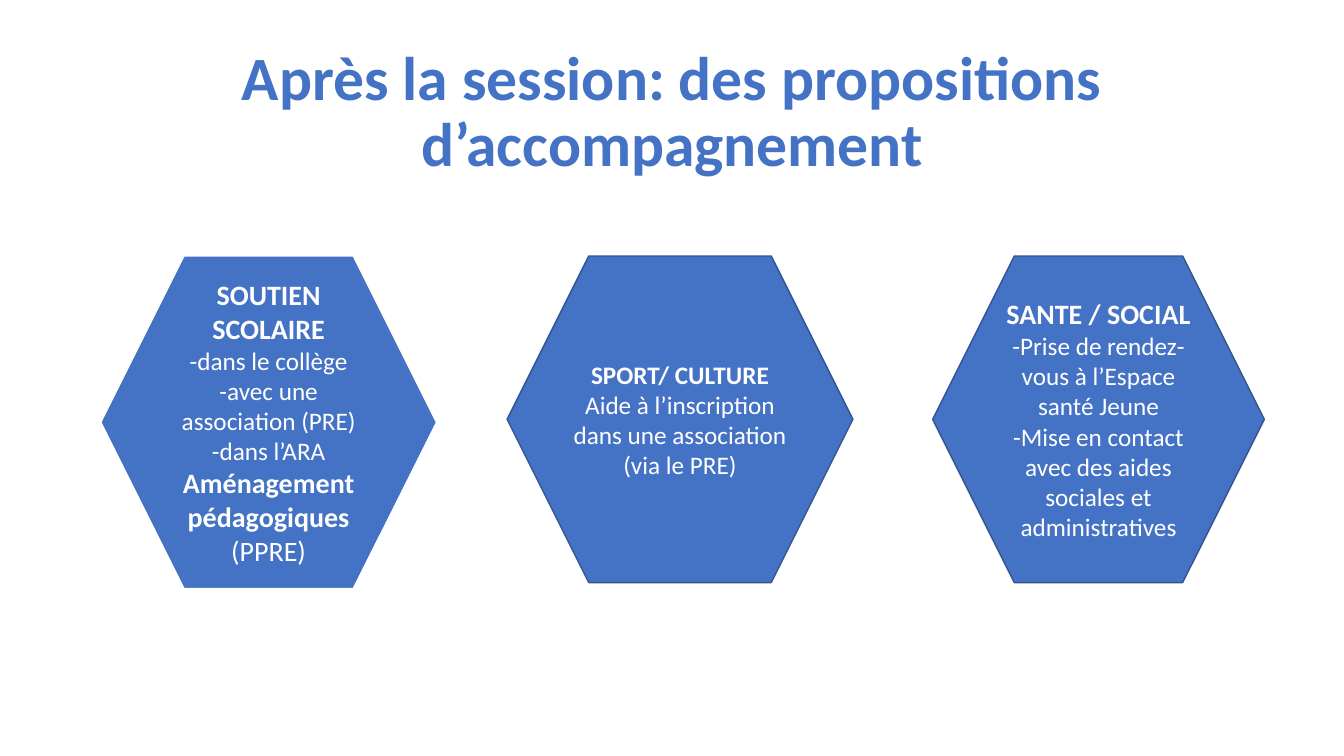
from pptx import Presentation
from pptx.dml.color import RGBColor
from pptx.enum.shapes import MSO_SHAPE
from pptx.enum.text import MSO_ANCHOR, PP_ALIGN
from pptx.util import Emu, Pt

EMU_PER_PX = 9144  # 100 px to the inch
HEXAGON = MSO_SHAPE.HEXAGON
MIDDLE = MSO_ANCHOR.MIDDLE
CENTER = PP_ALIGN.CENTER

FONT = "Calibri"
BLUE = "4472C4"
DARK_BLUE = "325491"
WHITE = "FFFFFF"

HEXAGON_TOP = 254
HEADING = {"size": 20, "bold": True}
SMALL_HEADING = {"size": 18, "bold": True}
DETAIL = {"size": 18}
LARGE_DETAIL = {"size": 20}

# left, width, height, outline colour, lines of text
PROPOSALS = [
    (100, 333, 330, WHITE, [
        ("SOUTIEN SCOLAIRE", HEADING),
        ("-dans le collège", DETAIL),
        ("-avec une association (PRE)", DETAIL),
        ("-dans l’ARA", DETAIL),
        ("Aménagement pédagogiques", HEADING),
        ("(PPRE)", LARGE_DETAIL),
    ]),
    (503, 343, 324, DARK_BLUE, [
        ("SPORT/ CULTURE", SMALL_HEADING),
        ("Aide à l’inscription dans une association", DETAIL),
        ("(via le PRE)", DETAIL),
    ]),
    (925, 329, 324, DARK_BLUE, [
        ("SANTE / SOCIAL", HEADING),
        ("-Prise de rendez-vous à l’Espace santé Jeune", DETAIL),
        ("-Mise en contact avec des aides sociales et administratives", DETAIL),
    ]),
]


def px(length):
    return Emu(length * EMU_PER_PX)


def color(hex_string):
    return RGBColor.from_string(hex_string)


def write(paragraph, text, *, size, bold=False, font_color=WHITE, line_spacing=1.0):
    paragraph.alignment = CENTER
    paragraph.line_spacing = line_spacing
    run = paragraph.add_run()
    run.text = text
    run.font.name = FONT
    run.font.size = Pt(size)
    run.font.bold = bold
    run.font.color.rgb = color(font_color)


def prepare_frame(shape):
    """Wrap the text, centre it vertically and return the text frame."""
    frame = shape.text_frame
    frame.word_wrap = True
    frame.vertical_anchor = MIDDLE
    return frame


def add_title(slide, text):
    box = slide.shapes.add_textbox(px(92), px(40), px(1150), px(145))
    write(prepare_frame(box).paragraphs[0], text, size=44, bold=True,
          font_color=BLUE, line_spacing=0.9)


def add_proposal(slide, left, width, height, outline, lines):
    shape = slide.shapes.add_shape(
        HEXAGON, px(left), px(HEXAGON_TOP), px(width), px(height))
    shape.shadow.inherit = False
    shape.fill.solid()
    shape.fill.fore_color.rgb = color(BLUE)
    shape.line.color.rgb = color(outline)
    shape.line.width = Pt(1)
    frame = prepare_frame(shape)
    for index, (text, style) in enumerate(lines):
        paragraph = frame.add_paragraph() if index else frame.paragraphs[0]
        write(paragraph, text, **style)


def main():
    presentation = Presentation()
    presentation.slide_width = px(1333)
    presentation.slide_height = px(750)
    slide = presentation.slides.add_slide(presentation.slide_layouts[6])
    add_title(slide, "Après la session: des propositions d’accompagnement")
    for proposal in PROPOSALS:
        add_proposal(slide, *proposal)
    presentation.save("out.pptx")


if __name__ == "__main__":
    main()
